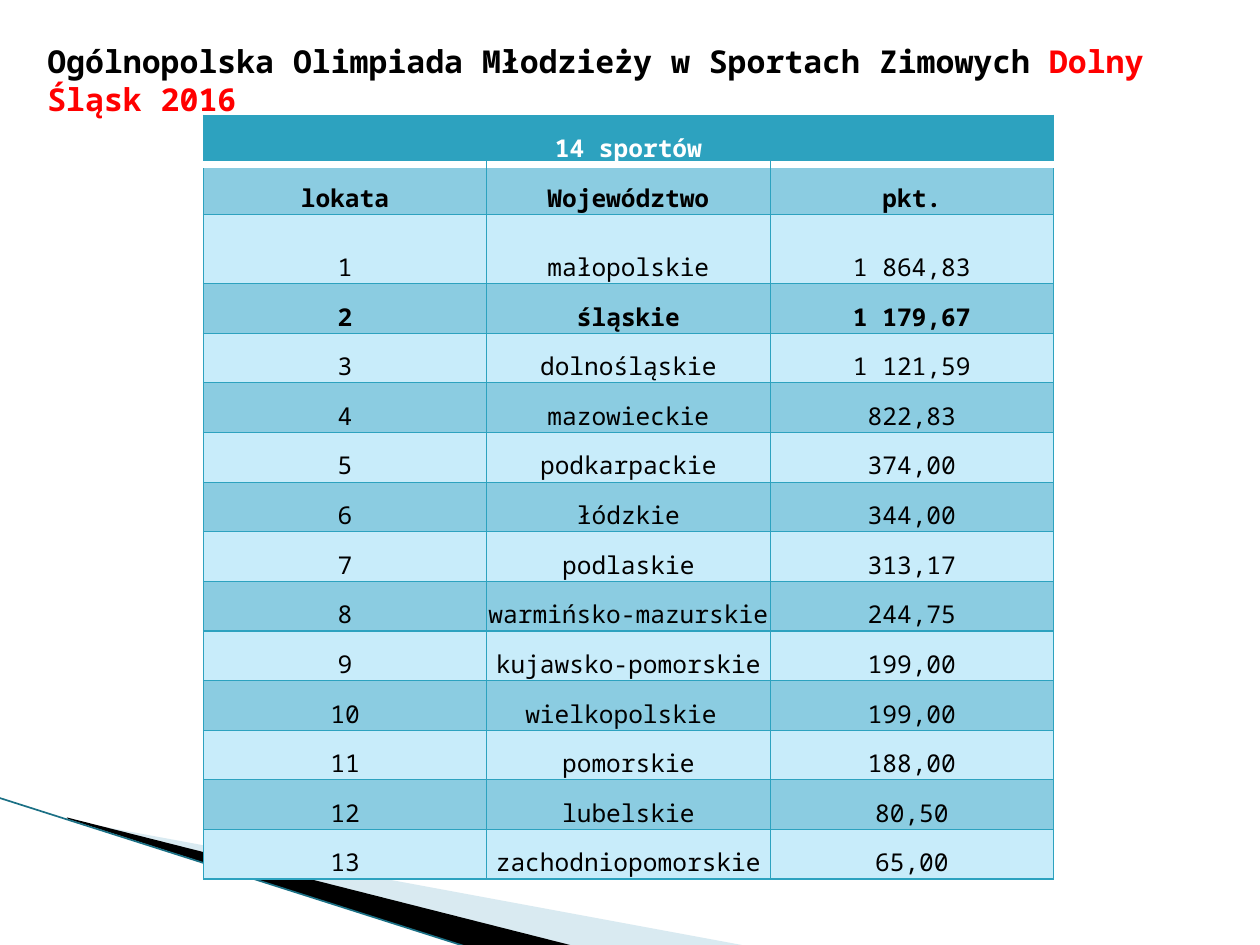
import pptx
import pptx.util
import pptx.dml.color
import pptx.enum.text
from lxml import etree
from pptx.oxml.ns import qn

Cm, Pt = pptx.util.Cm, pptx.util.Pt
PP, MSO = pptx.enum.text.PP_ALIGN, pptx.enum.text.MSO_ANCHOR

HEX = {
    "black": "000000", "white": "FFFFFF", "red": "FF0000",
    "teal": "2DA2BF", "band": "8BCCE1", "pale": "C8ECFA",
    "mist": "A0CBDC", "edge": "1B7085",
}
FACE = "Noto Sans Mono"
ROWS = [
    ("lokata", "Województwo", "pkt."),
    ("1", "małopolskie", "1 864,83"),
    ("2", "śląskie", "1 179,67"),
    ("3", "dolnośląskie", "1 121,59"),
    ("4", "mazowieckie", "822,83"),
    ("5", "podkarpackie", "374,00"),
    ("6", "łódzkie", "344,00"),
    ("7", "podlaskie", "313,17"),
    ("8", "warmińsko-mazurskie", "244,75"),
    ("9", "kujawsko-pomorskie", "199,00"),
    ("10", "wielkopolskie ", "199,00"),
    ("11", "pomorskie", "188,00"),
    ("12", "lubelskie", "80,50"),
    ("13", "zachodniopomorskie", "65,00"),
]
BOLD = {"lokata", "2"}


def rgb(name):
    return pptx.dml.color.RGBColor.from_string(HEX[name])


def apply(item, **form):
    for key, value in form.items():
        setattr(item, key, value)


def write(par, text, size, color, bold):
    run = par.add_run()
    run.text = text
    apply(run.font, name=FACE, size=Pt(size), bold=bold)
    run.font.color.rgb = rgb(color)


def reframe(shape, left, top, width, height):
    """Give a freeform a new frame while its outline stays in place."""
    dx, dy = shape.left - left, shape.top - top
    root = shape._element.spPr
    for dot in root.iter(qn("a:pt")):
        dot.set("x", str(int(dot.get("x")) + dx))
        dot.set("y", str(int(dot.get("y")) + dy))
    area = root.find(".//" + qn("a:pathLst"))[0]
    area.set("w", str(width))
    area.set("h", str(height))
    apply(shape, left=left, top=top, width=width, height=height)


def swoosh(slide, box):
    """Draw the corner wedges and their edge line."""
    left, top, width, height = box

    def spot(x, y):
        return Cm(left + x), Cm(top + y)

    wedges = [
        ("mist", 40, (1.98, -2.11, 10.57, 4.01),
         [(1.4, 0.54), (15.11, 3.08), (11.58, 3.08), (1.4, 0.51)]),
        ("black", 100, (-0.15, 0.08, 10.57, 2.34),
         [(1.35, 0.48), (11.61, 3.08), (width, height), (1.37, 0.51)]),
    ]
    for color, alpha, frame, dots in wedges:
        first, *rest = [spot(*dot) for dot in dots]
        pen = slide.shapes.build_freeform(*first)
        pen.add_line_segments(rest)
        wedge = pen.convert_to_shape()
        reframe(wedge, *spot(*frame[:2]), *map(Cm, frame[2:]))
        wedge.shadow.inherit = False
        wedge.fill.solid()
        wedge.fill.fore_color.rgb = rgb(color)
        wedge.line.fill.background()
        if alpha < 100:
            tint = wedge._element.spPr.find(".//" + qn("a:srgbClr"))
            etree.SubElement(tint, qn("a:alpha"), val=str(alpha * 1000))
    edge = slide.shapes.add_connector(1, *spot(-0.03, 0.08),
                                      *spot(width, height))
    edge.line.color.rgb = rgb("edge")
    edge.line.width = Pt(0.95)
    etree.SubElement(edge._element.spPr, qn("a:effectLst"))


def border(cell, side, color, width):
    line = etree.SubElement(cell._tc.get_or_add_tcPr(), qn("a:ln" + side),
                            w=str(Pt(width)))
    fill = etree.SubElement(line, qn("a:solidFill"))
    etree.SubElement(fill, qn("a:srgbClr"), val=HEX[color])


def style(cell, fill, thick=""):
    """Set margins, borders and fill; the thick side gets the white rule."""
    apply(cell, vertical_anchor=MSO.BOTTOM, margin_left=Cm(0.02),
          margin_right=Cm(0.02), margin_top=Cm(0.02), margin_bottom=0)
    for side in "LRTB":
        border(cell, side, *(("white", 4.33) if side == thick
                             else ("teal", 0.75)))
    cell.fill.solid()
    cell.fill.fore_color.rgb = rgb(fill)


def fill_cell(cell, text, color, bold):
    par = cell.text_frame.paragraphs[0]
    par.alignment = PP.CENTER
    write(par, text, 14, color, bold)


def ranking(slide, box):
    count = len(ROWS) + 1
    table = slide.shapes.add_table(count, 3, *map(Cm, box)).table
    for col in table.columns:
        col.width = Cm(box[2] / 3)
    for num, row in enumerate(table.rows):
        row.height = Cm(1.4 if num == 2 else 1)
    for cell in table.rows[0].cells:
        style(cell, "teal", "B")
    head = table.cell(0, 0)
    head.merge(table.cell(0, 2))
    fill_cell(head, "14 sportów", "white", True)
    for num, texts in enumerate(ROWS, 1):
        for col, text in enumerate(texts):
            cell = table.cell(num, col)
            style(cell, "band" if num % 2 else "pale", "T" if num == 1 else "")
            fill_cell(cell, text, "black", texts[0] in BOLD)


def heading(slide, box):
    title = slide.shapes.title
    left, top, width, height = map(Cm, box)
    apply(title, left=left, top=top, width=width, height=height)
    frame = title.text_frame
    apply(frame, word_wrap=True, vertical_anchor=MSO.TOP,
          auto_size=pptx.enum.text.MSO_AUTO_SIZE.SHAPE_TO_FIT_TEXT)
    par = frame.paragraphs[0]
    par.alignment = PP.LEFT
    write(par, "Ogólnopolska Olimpiada Młodzieży w Sportach Zimowych ",
          18, "black", True)
    write(par, "Dolny Śląsk 2016", 18, "red", True)
    slide.shapes._spTree.append(title._element)  # in front of the table


def main():
    deck = pptx.Presentation()
    apply(deck, slide_width=Cm(25.4), slide_height=Cm(19.05))
    slide = deck.slides.add_slide(deck.slide_layouts[5])
    swoosh(slide, (0, 16, 9.45, 3.1))
    ranking(slide, (4.1, 2.32, 17.14, 15.4))
    heading(slide, (0.7, 0.72, 24.2, 1.02))
    deck.save("out.pptx")


if __name__ == "__main__":
    main()
